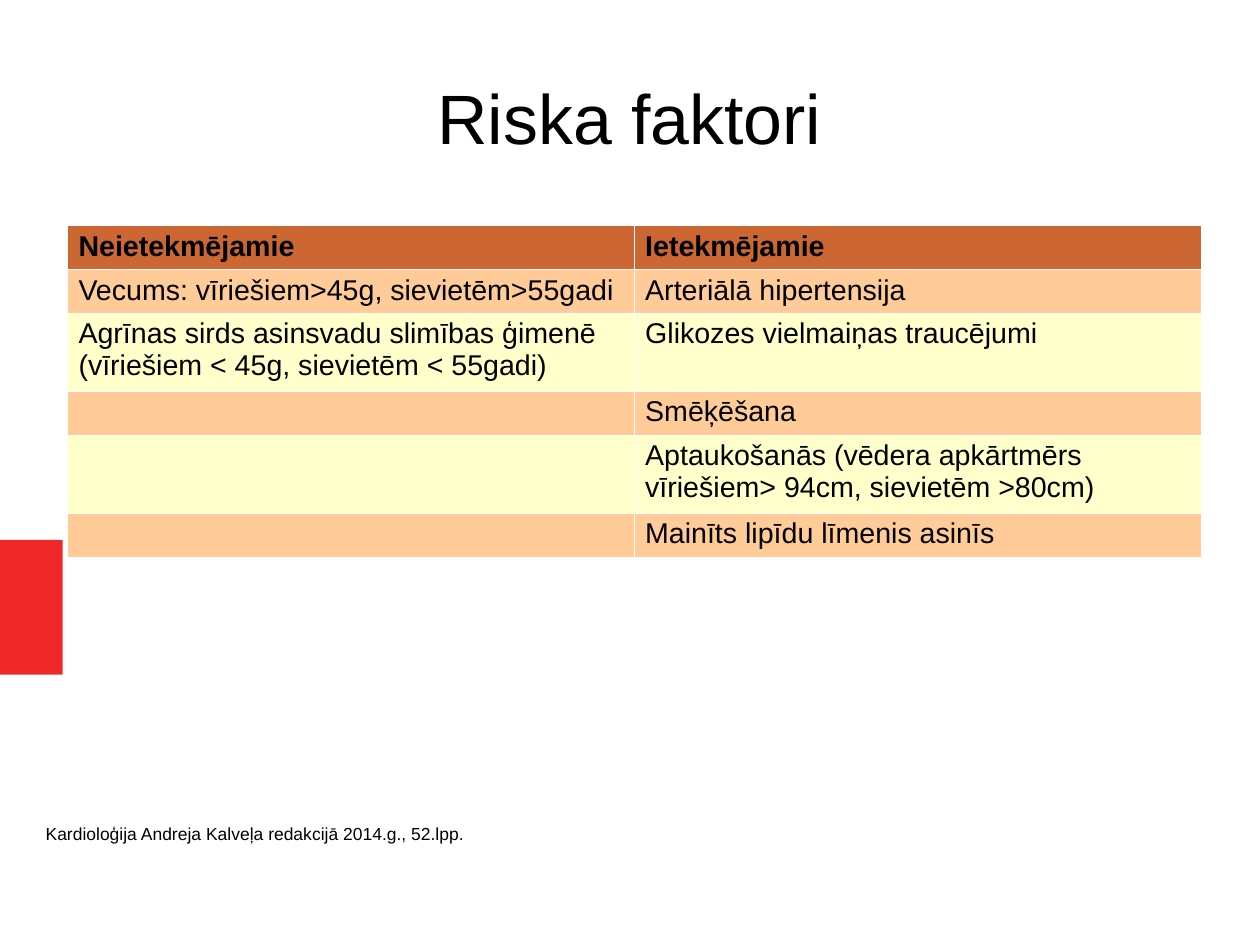
from lxml import etree
from pptx import Presentation
from pptx.dml.color import RGBColor
from pptx.enum.shapes import MSO_SHAPE
from pptx.enum.text import MSO_ANCHOR, PP_ALIGN
from pptx.oxml.ns import qn
from pptx.util import Pt

PX = 3175  # 288 px to the inch
WIDE, HIGH = 3175, 2381
RECT = MSO_SHAPE.RECTANGLE
MIDDLE = MSO_ANCHOR.MIDDLE
LEFT, CENTER = PP_ALIGN.LEFT, PP_ALIGN.CENTER

FONT = "Arial"
HEAD, BANDS = "CC6633", ("FFCC99", "FFFFCC")
EDGE = 762
HEIGHTS = (111, 110, 190, 110, 190, 110)
RISKS = (
    ("Neietekmējamie", "Ietekmējamie"),
    ("Vecums: vīriešiem>45g, sievietēm>55gadi", "Arteriālā hipertensija"),
    ("Agrīnas sirds asinsvadu slimības ģimenē (vīriešiem < 45g, sievietēm < 55gadi)",
     "Glikozes vielmaiņas traucējumi"),
    ("", "Smēķēšana"),
    ("", "Aptaukošanās (vēdera apkārtmērs vīriešiem> 94cm, sievietēm >80cm)"),
    ("", "Mainīts lipīdu līmenis asinīs"),
)


def color(code):
    return RGBColor.from_string(code)


def scale(box):
    return [n * PX for n in box]


def style(item, values):
    for name, value in values.items():
        setattr(item, name, value)


def pad(item, side, end):
    """Set the inner margins, left and right, then top and bottom."""
    style(item, {"margin_left": side * PX, "margin_right": side * PX,
                 "margin_top": end * PX, "margin_bottom": end * PX})


def paint(fill, code):
    fill.solid()
    fill.fore_color.rgb = color(code)


def write(para, text, size, bold=False):
    run = para.add_run()
    run.text = text
    style(run.font, {"name": FONT, "size": Pt(size), "bold": bold})
    run.font.color.rgb = color("000000")


def add_text(slide, box, text, size, align=LEFT, spacing=1.0):
    frame = slide.shapes.add_textbox(*scale(box)).text_frame
    style(frame, {"word_wrap": True, "vertical_anchor": MIDDLE})
    pad(frame, 0, 0)
    para = frame.paragraphs[0]
    style(para, {"alignment": align, "line_spacing": spacing})
    write(para, text, size)


def add_mark(slide, box):
    mark = slide.shapes.add_shape(RECT, *scale(box))
    mark.shadow.inherit = False
    paint(mark.fill, "EF2929")
    mark.line.fill.background()


def add_edges(cell):
    """Put a thin white line on each side, ahead of the cell's fill."""
    props = cell._tc.get_or_add_tcPr()
    for spot, side in enumerate(("lnL", "lnR", "lnT", "lnB")):
        line = etree.Element(qn("a:" + side), w=str(EDGE))
        solid = etree.SubElement(line, qn("a:solidFill"))
        etree.SubElement(solid, qn("a:srgbClr"), val="FFFFFF")
        props.insert(spot, line)


def set_blank(para, size):
    """Give an empty paragraph its font, which sets its line height."""
    end = etree.SubElement(para._p, qn("a:endParaRPr"), sz=str(size * 100))
    etree.SubElement(end, qn("a:latin"), typeface=FONT)


def add_risks(slide, box):
    table = slide.shapes.add_table(len(RISKS), len(RISKS[0]), *scale(box)).table
    style(table, {"first_row": True, "horz_banding": False})
    for r, (row, high) in enumerate(zip(RISKS, HEIGHTS)):
        table.rows[r].height = high * PX
        shade = BANDS[(r - 1) % 2] if r else HEAD
        for c, text in enumerate(row):
            cell = table.cell(r, c)
            pad(cell, 28, 12)
            paint(cell.fill, shade)
            add_edges(cell)
            para = cell.text_frame.paragraphs[0]
            if text:
                write(para, text, 18, r == 0)
            else:
                set_blank(para, 18)


def main():
    deck = Presentation()
    style(deck, {"slide_width": WIDE * PX, "slide_height": HIGH * PX})
    slide = deck.slides.add_slide(deck.slide_layouts[6])
    paint(slide.background.fill, "FFFFFF")
    add_mark(slide, (0, 1360, 158, 340))
    add_text(slide, (158, 95, 2857, 397), "Riska faktori", 44, CENTER)
    add_risks(slide, (170, 568, 2856, sum(HEIGHTS)))
    add_text(slide, (115, 1904, 2857, 397),
             "Kardioloģija Andreja Kalveļa redakcijā 2014.g., 52.lpp.", 11, spacing=0.9)
    deck.save("out.pptx")


if __name__ == "__main__":
    main()
